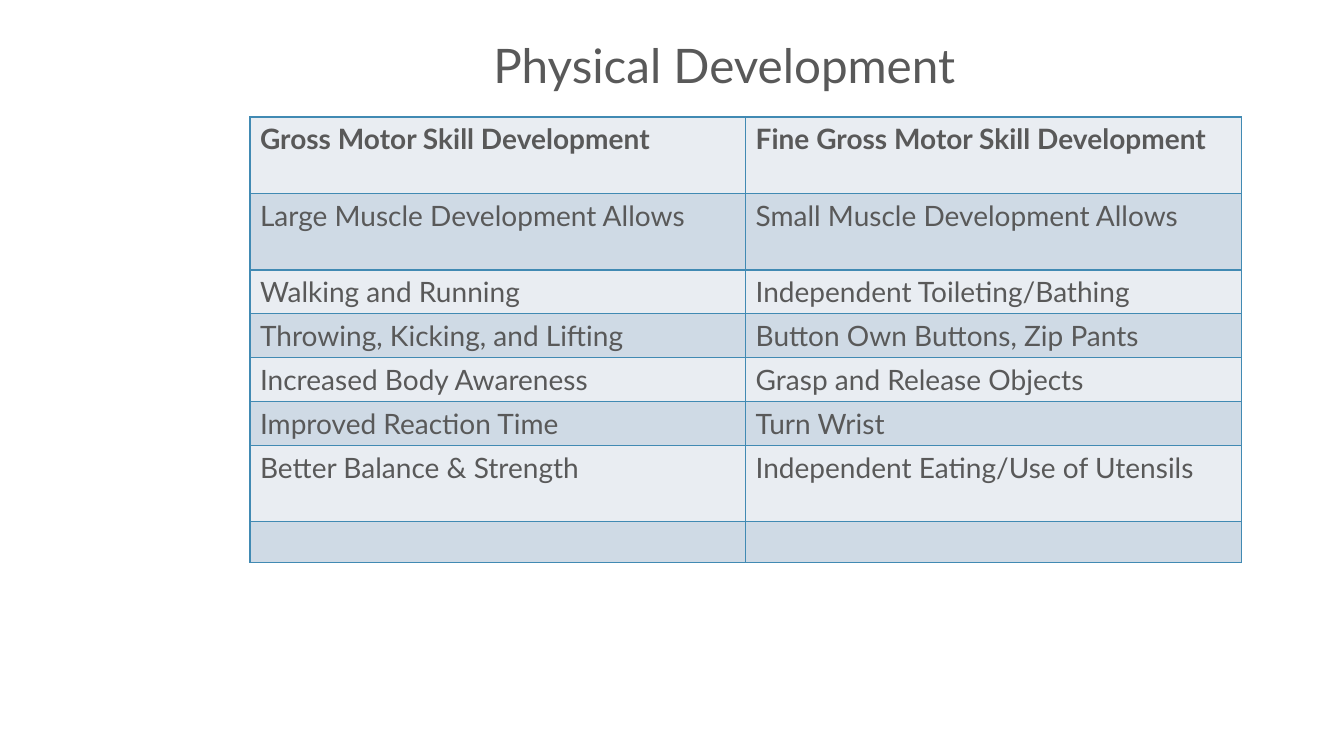
import dataclasses

import lxml.etree
import pptx
import pptx.dml.color
import pptx.enum.text
import pptx.oxml.ns
import pptx.util

SLIDE_WIDTH = pptx.util.Inches(13.33)
SLIDE_HEIGHT = pptx.util.Inches(7.5)
TEXT_COLOR = "595959"
BORDER_COLOR = "418AB3"
BAND_COLORS = ("E9EDF2", "CFDAE5")
TALL, SHORT, EMPTY = 10.13, 5.8, 5.3


@dataclasses.dataclass(frozen=True)
class Area:
    left: float
    top: float
    width: float
    height: float

    def box(self) -> tuple[int, int, int, int]:
        return (across(self.left), down(self.top), across(self.width), down(self.height))


@dataclasses.dataclass(frozen=True)
class SkillRow:
    height: float
    gross: str = ""
    fine: str = ""
    bold: bool = False


SKILL_ROWS = (
    SkillRow(TALL, "Gross Motor Skill Development", "Fine Gross Motor Skill Development", True),
    SkillRow(TALL, "Large Muscle Development Allows", "Small Muscle Development Allows"),
    SkillRow(SHORT, "Walking and Running", "Independent Toileting/Bathing"),
    SkillRow(SHORT, "Throwing, Kicking, and Lifting", "Button Own Buttons, Zip Pants"),
    SkillRow(SHORT, "Increased Body Awareness", "Grasp and Release Objects"),
    SkillRow(SHORT, "Improved Reaction Time", "Turn Wrist"),
    SkillRow(TALL, "Better Balance & Strength", "Independent Eating/Use of Utensils"),
    SkillRow(EMPTY),
)
TITLE_AREA = Area(15.45, 4.13, 76.89, 8.93)
TABLE_AREA = Area(18.6, 15.47, 73.75, sum(row.height for row in SKILL_ROWS))


def across(percent: float) -> int:
    return round(SLIDE_WIDTH * percent / 100)


def down(percent: float) -> int:
    return round(SLIDE_HEIGHT * percent / 100)


def color(value: str) -> pptx.dml.color.RGBColor:
    return pptx.dml.color.RGBColor.from_string(value)


def write(paragraph, text: str, size: float, bold: bool = False) -> None:
    run = paragraph.add_run()
    run.text = text
    formats = {"name": "Lato", "size": pptx.util.Pt(size), "bold": bold}
    for name, value in formats.items():
        setattr(run.font, name, value)
    run.font.color.rgb = color(TEXT_COLOR)


def add_borders(cell) -> None:
    qualify = pptx.oxml.ns.qn
    properties = cell._tc.get_or_add_tcPr()
    for side in ("a:lnL", "a:lnR", "a:lnT", "a:lnB"):
        line = lxml.etree.SubElement(properties, qualify(side), w=str(pptx.util.Pt(1)))
        fill = lxml.etree.SubElement(line, qualify("a:solidFill"))
        lxml.etree.SubElement(fill, qualify("a:srgbClr"), val=BORDER_COLOR)


def add_title(slide, text: str) -> None:
    frame = slide.shapes.add_textbox(*TITLE_AREA.box()).text_frame
    formats = {"word_wrap": True, "vertical_anchor": pptx.enum.text.MSO_ANCHOR.BOTTOM}
    for name, value in formats.items():
        setattr(frame, name, value)
    paragraph = frame.paragraphs[0]
    formats = {"alignment": pptx.enum.text.PP_ALIGN.CENTER, "line_spacing": 0.9}
    for name, value in formats.items():
        setattr(paragraph, name, value)
    write(paragraph, text, 34)


def add_skill_table(slide) -> None:
    table = slide.shapes.add_table(len(SKILL_ROWS), 2, *TABLE_AREA.box()).table
    for name in ("first_row", "horz_banding"):
        setattr(table, name, False)
    for row_index, skill_row in enumerate(SKILL_ROWS):
        table.rows[row_index].height = down(skill_row.height)
        for column_index, text in enumerate((skill_row.gross, skill_row.fine)):
            cell = table.cell(row_index, column_index)
            add_borders(cell)
            cell.fill.solid()
            cell.fill.fore_color.rgb = color(BAND_COLORS[row_index % 2])
            if text:
                write(cell.text_frame.paragraphs[0], text, 20, skill_row.bold)


def main() -> None:
    presentation = pptx.Presentation()
    presentation.slide_width = SLIDE_WIDTH
    presentation.slide_height = SLIDE_HEIGHT
    slide = presentation.slides.add_slide(presentation.slide_layouts[6])
    add_title(slide, "Physical Development")
    add_skill_table(slide)
    presentation.save("out.pptx")


if __name__ == "__main__":
    main()
